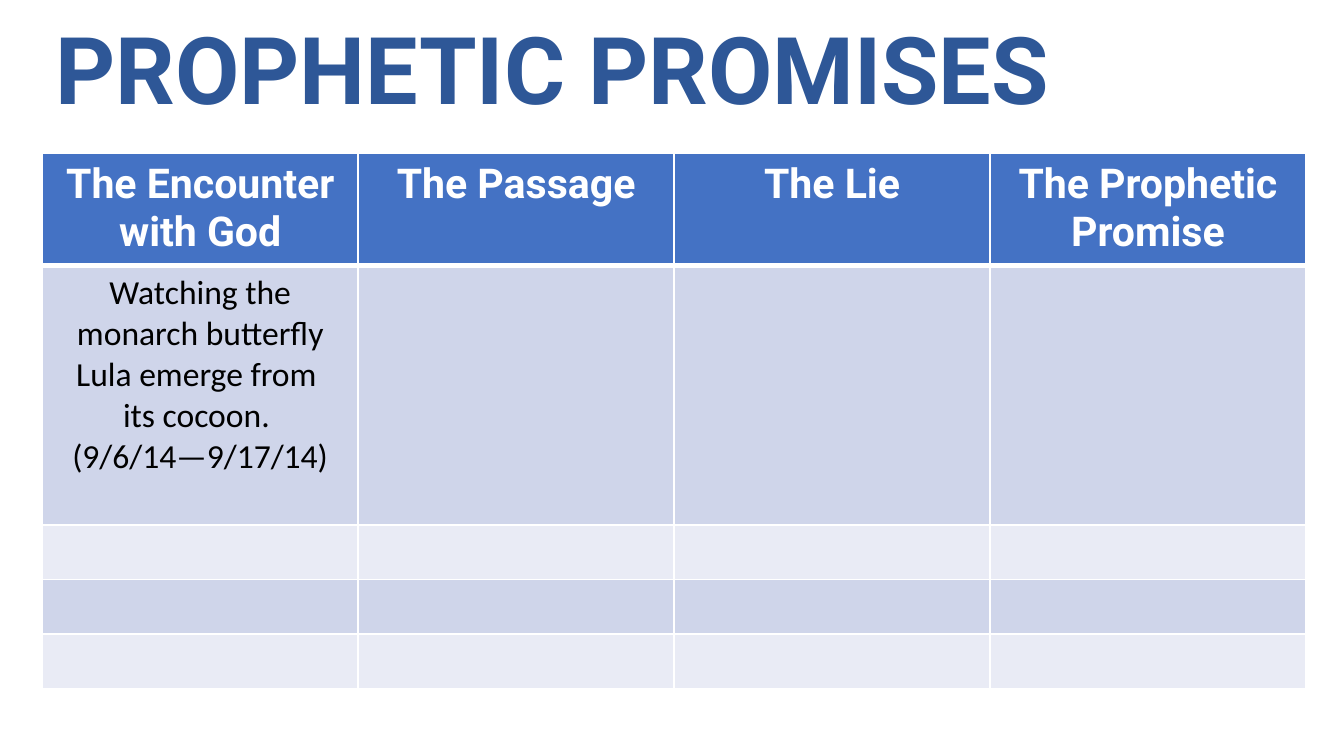
"""Build the Prophetic Promises slide: a title above a four-column table."""
from dataclasses import dataclass

from lxml import etree
from pptx import Presentation
from pptx.dml.color import RGBColor
from pptx.enum.text import MSO_ANCHOR, PP_ALIGN
from pptx.oxml.ns import qn
from pptx.util import Cm, Pt

CENTER = PP_ALIGN.CENTER
MIDDLE = MSO_ANCHOR.MIDDLE


@dataclass(frozen=True)
class Theme:
    title: str = "2E5797"
    header: str = "4472C4"
    bands: tuple = ("CFD5EA", "E9EBF5")
    white: str = "FFFFFF"
    black: str = "000000"
    heading_font: str = "Roboto"
    body_font: str = "Calibri"
    title_size: int = 50
    header_size: int = 22
    body_size: int = 18
    thin: int = 1
    thick: int = 3


theme = Theme()


def add_span(para, text, font, size, color, bold):
    span = para.add_run()
    span.text = text
    span.font.name = font
    span.font.size = Pt(size)
    span.font.bold = bold
    span.font.color.rgb = RGBColor.from_string(color)


def add_border(cell, side, width):
    properties = cell._tc.get_or_add_tcPr()
    line = etree.SubElement(properties, qn(f"a:{side}"), w=str(Pt(width)))
    fill = etree.SubElement(line, qn("a:solidFill"))
    etree.SubElement(fill, qn("a:srgbClr"), val=theme.white)


deck = Presentation()
deck.slide_width = Cm(25.4)
deck.slide_height = Cm(14.28)
page = deck.slides.add_slide(deck.slide_layouts[6])

title_box = page.shapes.add_textbox(Cm(0.8), Cm(0.3), Cm(24.4), Cm(2.2))
title_frame = title_box.text_frame
title_frame.word_wrap = True
title_frame.vertical_anchor = MIDDLE
title_para = title_frame.paragraphs[0]
title_para.line_spacing = 0.9
add_span(title_para, "PROPHETIC PROMISES", theme.heading_font,
         theme.title_size, theme.title, True)

headings = ["The Encounter with God", "The Passage", "The Lie",
            "The Prophetic Promise"]
encounter = ["Watching the monarch butterfly Lula emerge from ",
             "its cocoon. ", "(9/6/14—9/17/14)"]
row_heights = [2.08, 4.9, 1.03, 1.03, 1.03]
column_width = 5.97

table = page.shapes.add_table(
    len(row_heights), len(headings), Cm(0.8), Cm(2.9),
    Cm(column_width * len(headings)), Cm(sum(row_heights))).table
for column in table.columns:
    column.width = Cm(column_width)

for row_index, height in enumerate(row_heights):
    row = table.rows[row_index]
    row.height = Cm(height)
    color = theme.bands[(row_index - 1) % 2] if row_index else theme.header
    top = theme.thick if row_index == 1 else theme.thin
    bottom = theme.thin if row_index else theme.thick
    for cell in row.cells:
        add_border(cell, "lnL", theme.thin)
        add_border(cell, "lnR", theme.thin)
        add_border(cell, "lnT", top)
        add_border(cell, "lnB", bottom)
        cell.fill.solid()
        cell.fill.fore_color.rgb = RGBColor.from_string(color)

for cell, heading in zip(table.rows[0].cells, headings):
    para = cell.text_frame.paragraphs[0]
    para.alignment = CENTER
    add_span(para, heading, theme.heading_font, theme.header_size,
             theme.white, True)

para = table.cell(1, 0).text_frame.paragraphs[0]
para.alignment = CENTER
for index, text in enumerate(encounter):
    if index:
        para.add_line_break()
    add_span(para, text, theme.body_font, theme.body_size, theme.black, False)

deck.save("out.pptx")
